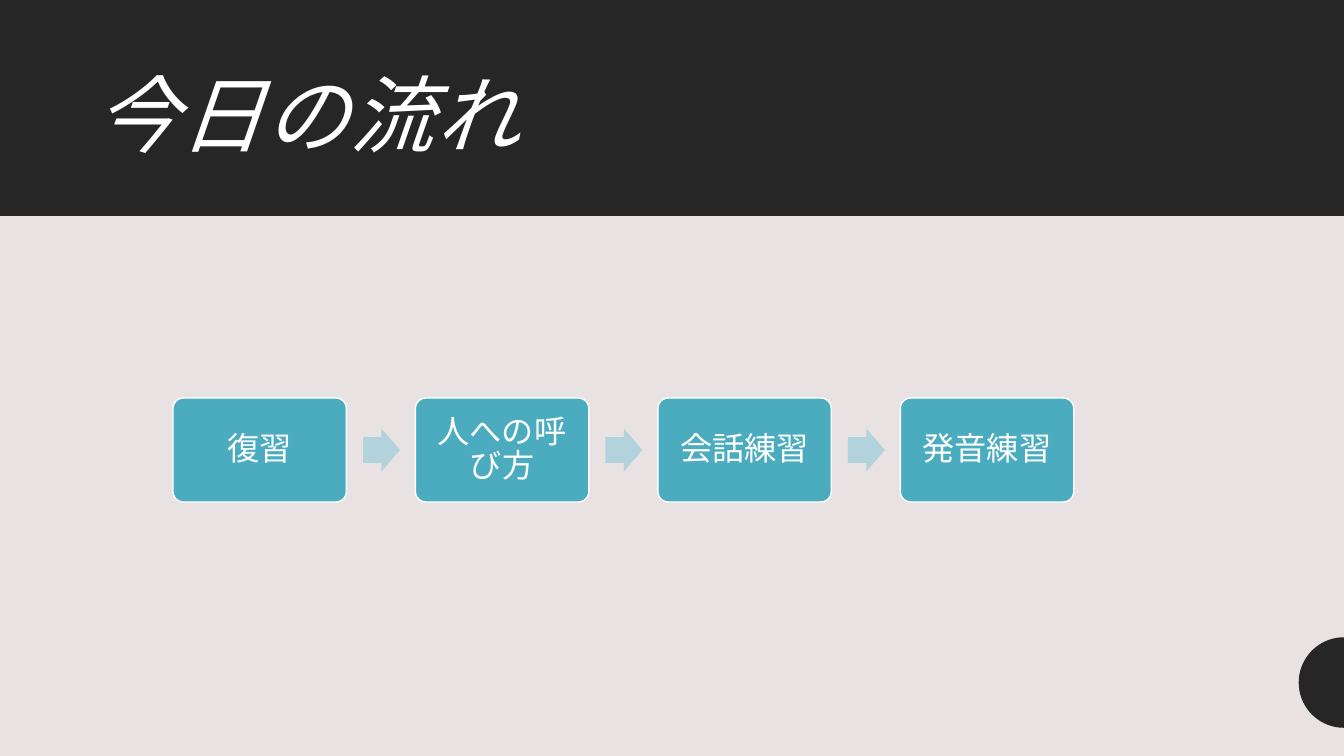
import math
from dataclasses import dataclass

from pptx import Presentation
from pptx import util as u
from pptx.dml import color
from pptx.enum import lang, shapes, text


@dataclass(frozen=True)
class Theme:
    dark: color.RGBColor = color.RGBColor.from_string("262626")
    paper: color.RGBColor = color.RGBColor.from_string("E8E2E3")
    teal: color.RGBColor = color.RGBColor.from_string("4BACC0")
    pale: color.RGBColor = color.RGBColor.from_string("B2D2DC")
    white: color.RGBColor = color.RGBColor.from_string("FFFFFF")
    heading_font: str = "Roboto"
    step_font: str = "Lato"
    heading_size: int = 60
    step_size: int = 23


@dataclass(frozen=True)
class Box:
    left: float
    top: float
    width: float
    height: float

    def lengths(self) -> list[u.Length]:
        return [u.Cm(v) for v in (self.left, self.top, self.width, self.height)]


THEME = Theme()
SLIDE_WIDTH, SLIDE_HEIGHT = 33.87, 19.05
HEADING = "今日の流れ"
STEPS = ("復習", "人への呼び方", "会話練習", "発音練習")
FIRST_STEP = Box(4.36, 10.03, 4.37, 2.62)
STEP_PITCH = 6.11
ARROW_OFFSET, ARROW_WIDTH, ARROW_HEIGHT = 4.79, 0.93, 1.08


def paint(shape, fill: color.RGBColor) -> None:
    shape.shadow.inherit = False
    shape.fill.solid()
    shape.fill.fore_color.rgb = fill
    shape.line.fill.background()


def add_block(slide, preset: shapes.MSO_SHAPE, box: Box, fill: color.RGBColor,
              adjustments: tuple[float, ...] = ()):
    block = slide.shapes.add_shape(preset, *box.lengths())
    paint(block, fill)
    for index, value in enumerate(adjustments):
        block.adjustments[index] = value
    return block


def write(shape, words: str, font_name: str, size: int, align: text.PP_ALIGN):
    frame = shape.text_frame
    frame.text = words
    frame.word_wrap = True
    frame.vertical_anchor = text.MSO_ANCHOR.MIDDLE
    paragraph = frame.paragraphs[0]
    paragraph.alignment = align
    paragraph.line_spacing = 0.9
    font = paragraph.runs[0].font
    font.name = font_name
    font.size = u.Pt(size)
    font.color.rgb = THEME.white
    font.language_id = lang.MSO_LANGUAGE_ID.JAPANESE
    return paragraph.runs[0]


def add_heading(slide) -> None:
    add_block(slide, shapes.MSO_SHAPE.RECTANGLE, Box(0, 0, SLIDE_WIDTH, 5.44), THEME.dark)
    heading = slide.shapes.add_textbox(*Box(2.12, 1.17, 29.63, 3.69).lengths())
    run = write(heading, HEADING, THEME.heading_font, THEME.heading_size, text.PP_ALIGN.LEFT)
    run.font.italic = True
    run.font._element.set("spc", "100")


def add_half_disc(slide, middle: float, radius: float) -> None:
    angles = [math.pi * (0.5 + k / 48) for k in range(49)]
    rim = [(u.Cm(SLIDE_WIDTH + radius * math.cos(a)), u.Cm(middle - radius * math.sin(a)))
           for a in angles]
    builder = slide.shapes.build_freeform(*rim[0])
    builder.add_line_segments(rim[1:], close=True)
    paint(builder.convert_to_shape(), THEME.dark)


def add_step(slide, words: str, left: float) -> None:
    box = Box(left, FIRST_STEP.top, FIRST_STEP.width, FIRST_STEP.height)
    step = add_block(slide, shapes.MSO_SHAPE.ROUNDED_RECTANGLE, box, THEME.teal, (0.1,))
    step.line.color.rgb = THEME.white
    step.line.width = u.Pt(1)
    frame = step.text_frame
    frame.margin_left = frame.margin_right = u.Cm(0.25)
    frame.margin_top = frame.margin_bottom = u.Cm(0.25)
    write(step, words, THEME.step_font, THEME.step_size, text.PP_ALIGN.CENTER)


def add_flow(slide) -> None:
    arrow_top = FIRST_STEP.top + (FIRST_STEP.height - ARROW_HEIGHT) / 2
    for index, words in enumerate(STEPS):
        left = FIRST_STEP.left + index * STEP_PITCH
        add_step(slide, words, left)
        if index < len(STEPS) - 1:
            box = Box(left + ARROW_OFFSET, arrow_top, ARROW_WIDTH, ARROW_HEIGHT)
            add_block(slide, shapes.MSO_SHAPE.RIGHT_ARROW, box, THEME.pale, (0.6, 0.5))


def main() -> None:
    deck = Presentation()
    deck.slide_width, deck.slide_height = u.Cm(SLIDE_WIDTH), u.Cm(SLIDE_HEIGHT)
    slide = deck.slides.add_slide(deck.slide_layouts[6])
    slide.background.fill.solid()
    slide.background.fill.fore_color.rgb = THEME.paper
    add_heading(slide)
    add_half_disc(slide, middle=17.2, radius=1.14)
    add_flow(slide)
    deck.save("out.pptx")


if __name__ == "__main__":
    main()
